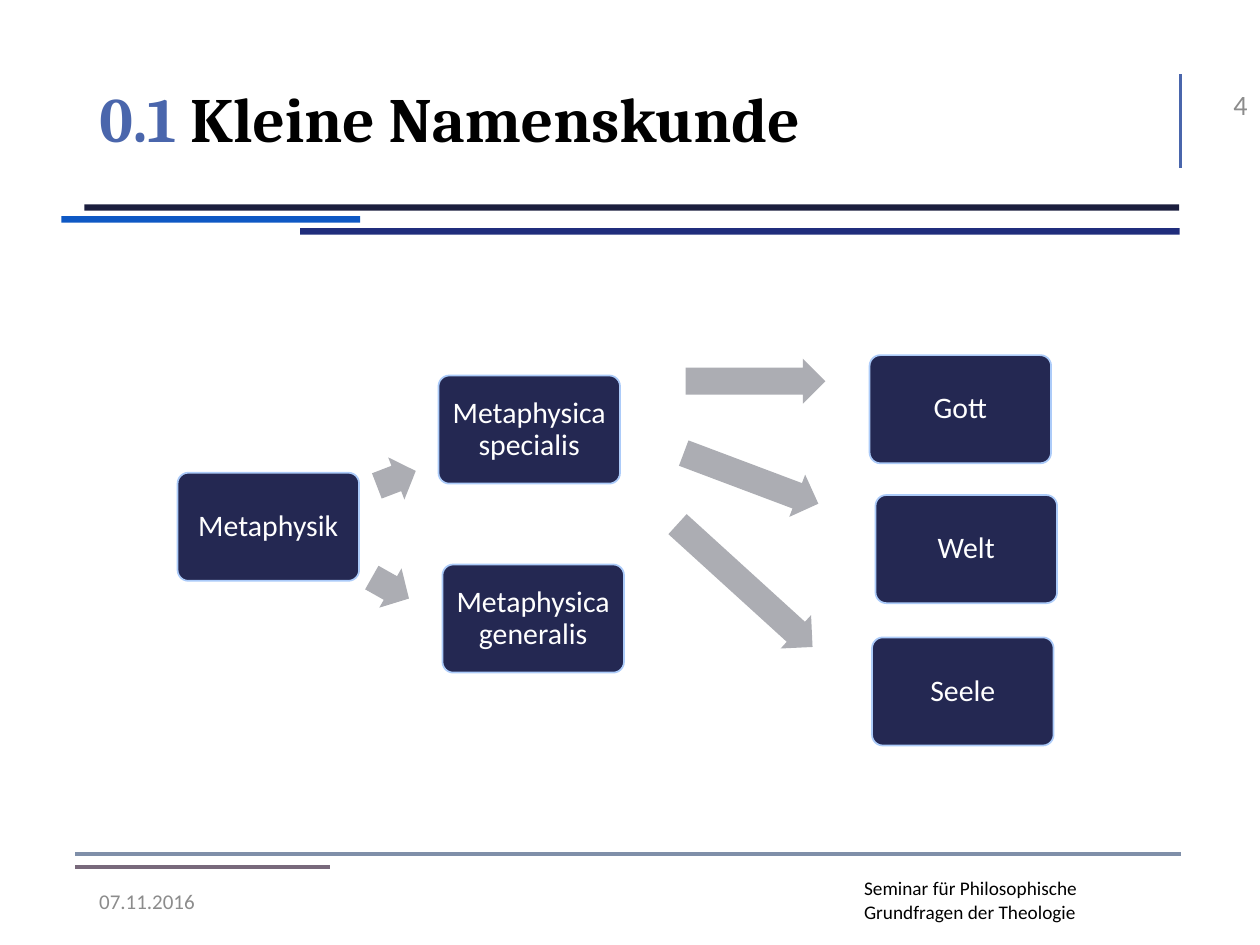
from pptx import Presentation
from pptx.dml.color import RGBColor
from pptx.enum.shapes import MSO_CONNECTOR as Line, MSO_SHAPE as Shape
from pptx.enum.text import MSO_ANCHOR as Anchor, MSO_AUTO_SIZE as AutoSize, PP_ALIGN as Align
from pptx.oxml.ns import qn
from pptx.util import Cm, Pt
from lxml.etree import SubElement

NODE_WIDTH, NODE_HEIGHT = 3.66, 2.18


def color(hex_code):
    return RGBColor.from_string(hex_code)


def style_font(font, size, hex_code, name="Calibri", bold=False):
    font.name, font.size, font.bold = name, Pt(size), bold
    font.color.rgb = color(hex_code)


def add_block(page, kind, left, top, width, height, fill, outline=None):
    block = page.shapes.add_shape(kind, Cm(left), Cm(top), Cm(width), Cm(height))
    block.shadow.inherit = False
    block.fill.solid()
    block.fill.fore_color.rgb = color(fill)
    if outline:
        block.line.color.rgb = color(outline)
        block.line.width = Pt(1)
    else:
        block.line.fill.background()
    return block


def add_rule(page, start, end, hex_code, width):
    rule = page.shapes.add_connector(Line.STRAIGHT, *map(Cm, start + end))
    rule.line.color.rgb = color(hex_code)
    rule.line.width = Pt(width)
    SubElement(rule._element.spPr, qn("a:effectLst"))


def add_label(page, text, left, top, width, height, size, hex_code,
              align=Align.LEFT, anchor=Anchor.MIDDLE):
    box = page.shapes.add_textbox(Cm(left), Cm(top), Cm(width), Cm(height))
    frame = box.text_frame
    frame.word_wrap = True
    frame.vertical_anchor = anchor
    frame.text = text
    para = frame.paragraphs[0]
    para.alignment = align
    style_font(para.runs[0].font, size, hex_code)


def add_header(page, left, top, width):
    # Title with a coloured section number
    title = page.shapes.title
    title.left, title.top = Cm(left + 0.51), Cm(top)
    title.width, title.height = Cm(width - 0.67), Cm(2.9)
    title.line.color.rgb = color("FFFFFF")
    title.line.width = Pt(6)
    frame = title.text_frame
    frame.word_wrap = True
    frame.auto_size = AutoSize.NONE
    frame.vertical_anchor = Anchor.MIDDLE
    para = frame.paragraphs[0]
    para.alignment = Align.LEFT
    para.line_spacing = 0.9
    for text, hex_code in (("0.1", "4A66AC"), (" Kleine Namenskunde", "000000")):
        span = para.add_run()
        span.text = text
        style_font(span.font, 36, hex_code, "Cambria", True)

    # Staggered bars under the title
    bars = [(0.46, 22.07, "1B1E3E"), (0, 6.02, "0E58C4"), (4.81, 17.73, "202D7C")]
    for index, (offset, length, fill) in enumerate(bars):
        add_block(page, Shape.RECTANGLE, left + offset, top + 3.1 + index * 0.24,
                  length, 0.13, fill)

    # Page number beside its rule
    right = left + width
    add_rule(page, (right, top + 0.48), (right, top + 2.36), "4A66AC", 2)
    add_label(page, "4", right, top + 0.38, 1.6, 1.42, 16, "8C8C8C", Align.RIGHT)


def add_node(page, text, left, top):
    node = add_block(page, Shape.ROUNDED_RECTANGLE, left, top,
                     NODE_WIDTH, NODE_HEIGHT, "242852", "ACCBF9")
    node.adjustments[0] = 0.1
    frame = node.text_frame
    frame.word_wrap = True
    frame.vertical_anchor = Anchor.MIDDLE
    # The rounded corners already inset the text
    frame.margin_left = frame.margin_right = Cm(0.1)
    frame.text = text
    para = frame.paragraphs[0]
    para.alignment = Align.CENTER
    para.line_spacing = 0.9
    style_font(para.runs[0].font, 17, "FFFFFF")


def add_arrow(page, left, top, length, angle):
    arrow = add_block(page, Shape.RIGHT_ARROW, left, top, length, 0.91, "ACADB3")
    arrow.adjustments[0], arrow.adjustments[1] = 0.6, 0.5
    arrow.rotation = angle


def add_diagram(page, left, top):
    # Terms, from the general to the particular
    nodes = [
        ("Metaphysik", 0, 2.37),
        ("Metaphysica specialis", 5.26, 0.41),
        ("Metaphysica generalis", 5.34, 4.22),
        ("Gott", 13.95, 0),
        ("Welt", 14.07, 2.82),
        ("Seele", 14, 5.69),
    ]
    for text, x, y in nodes:
        add_node(page, text, left + x, top + y)

    # Arrows: x, y, length, angle
    arrows = [
        (3.99, 2.03, 0.84, 339),
        (3.86, 4.24, 0.86, 29.5),
        (10.24, 0.07, 2.82, 0),
        (10.11, 2.03, 2.9, 20.6),
        (9.6, 4.19, 3.68, 42.3),
    ]
    for x, y, length, angle in arrows:
        add_arrow(page, left + x, top + y, length, angle)


def add_footer(page, left, top, width):
    add_rule(page, (left, top), (left + width, top), "7F8FA9", 2.5)
    add_rule(page, (left, top + 0.26), (left + 5.13, top + 0.26), "78697B", 2.25)
    add_label(page, "07.11.2016", left + 0.23, top + 0.43, 2.51, 1.02, 12, "8C8C8C")
    add_label(page, "Seminar für Philosophische Grundfragen der Theologie",
              left + 15.65, top + 0.33, 4.95, 1.19, 11, "000000", anchor=Anchor.TOP)


def main():
    deck = Presentation()
    deck.slide_width, deck.slide_height = Cm(25.4), Cm(19.05)
    page = deck.slides.add_slide(deck.slide_layouts[5])
    add_header(page, 1.24, 1.02, 22.56)
    add_diagram(page, 3.58, 7.16)
    add_footer(page, 1.52, 17.22, 22.28)
    deck.save("out.pptx")


if __name__ == "__main__":
    main()
